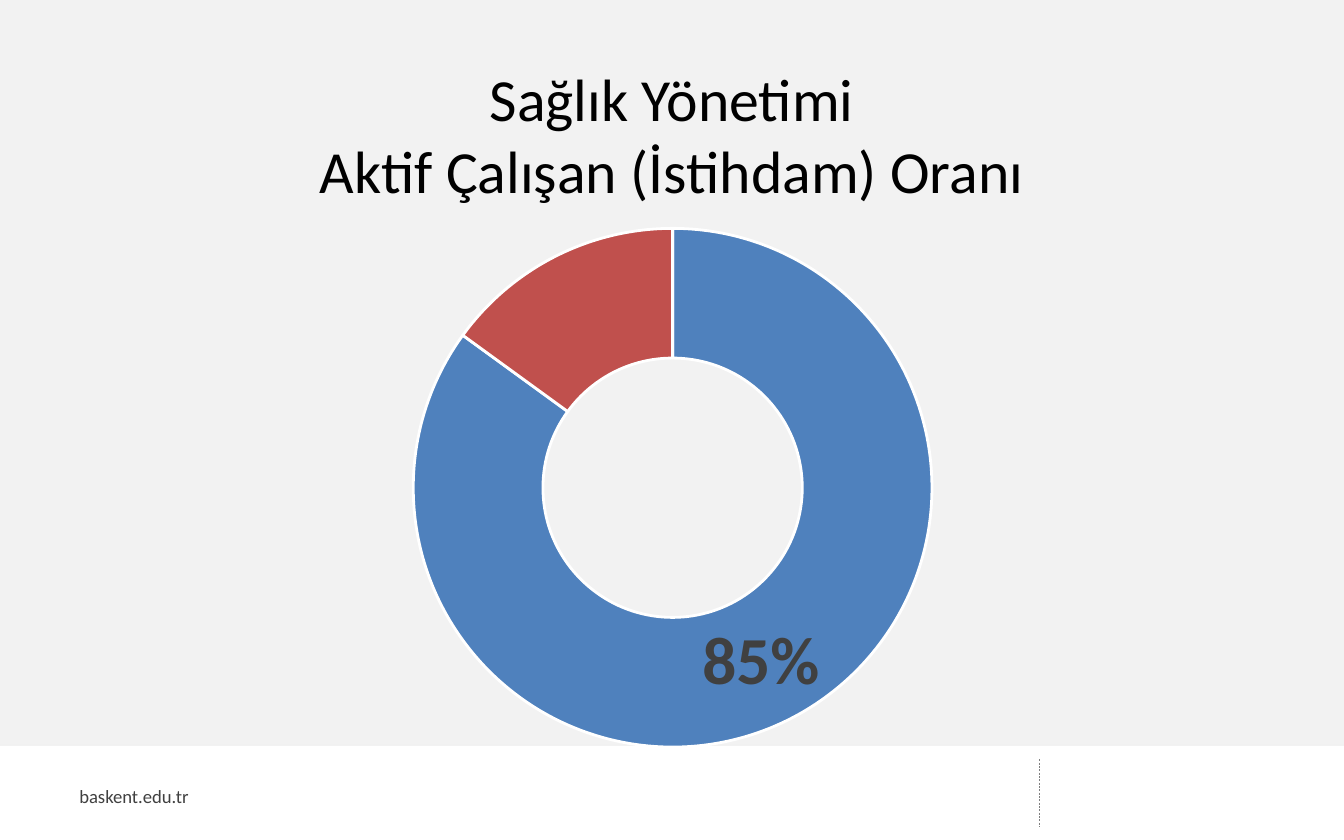
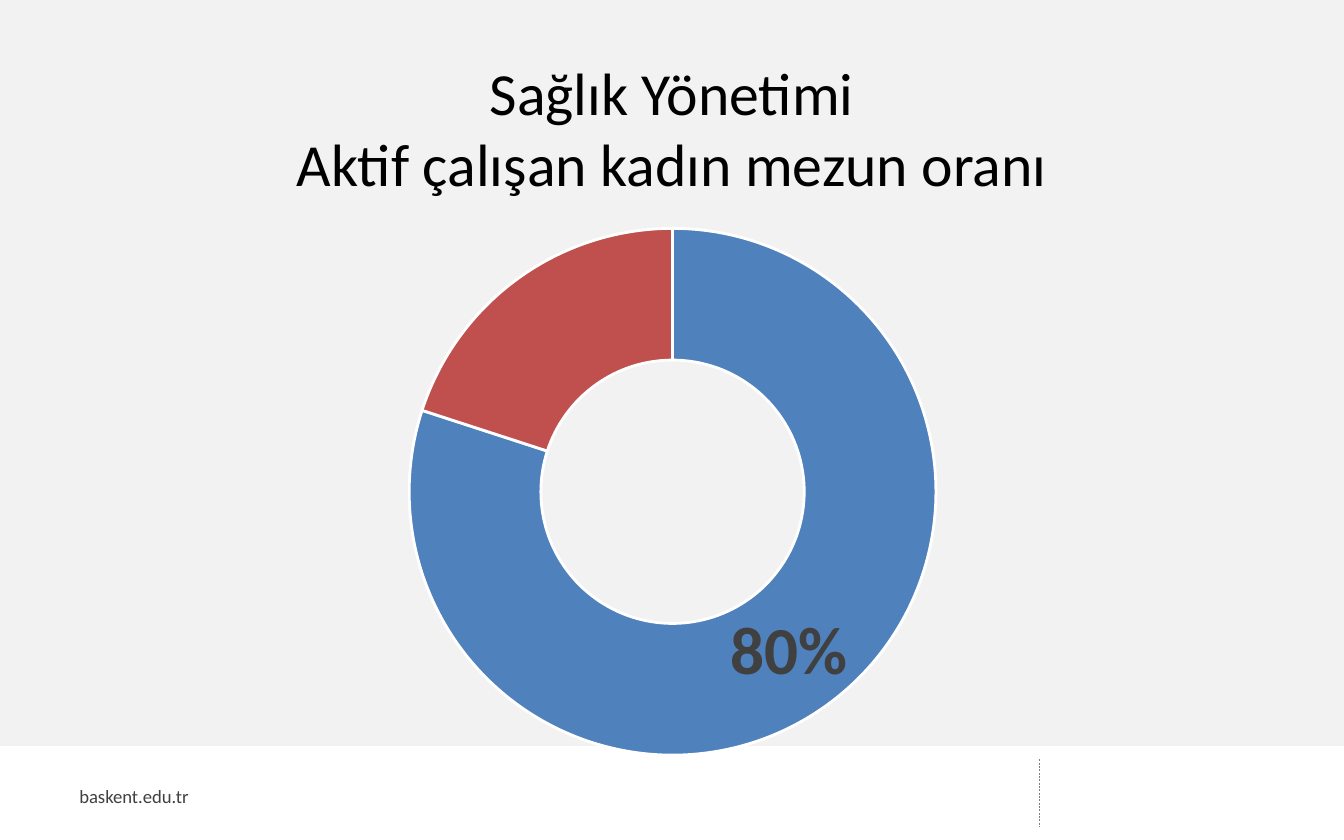
from lxml import etree
from pptx import Presentation
from pptx.chart.data import CategoryChartData
from pptx.dml.color import RGBColor
from pptx.enum.chart import XL_CHART_TYPE
from pptx.enum.dml import MSO_LINE
from pptx.enum.shapes import MSO_CONNECTOR, MSO_SHAPE
from pptx.enum.text import MSO_ANCHOR, MSO_AUTO_SIZE, PP_ALIGN
from pptx.oxml import parse_xml
from pptx.oxml.ns import nsdecls, qn
from pptx.util import Inches, Pt

# Content: title (\v breaks a line), its box and anchor, share shown, ring diameter
SLIDES = [
    {"title": "Sağlık Yönetimi\nAktif Çalışan (İstihdam) Oranı",
     "box": (0.9, 0.41, 8.2, 1.72), "anchor": MSO_ANCHOR.TOP,
     "share": 0.85, "ring": 3.86},
    {"title": "Sağlık Yönetimi\vAktif çalışan kadın mezun oranı",
     "box": (1.25, 0.81, 7.5, 0.72), "anchor": MSO_ANCHOR.BOTTOM,
     "share": 0.80, "ring": 3.92},
]
FOOTER = "baskent.edu.tr"

# Shared style
FONT = "Calibri"
PAPER, WHITE, BLACK = "F2F2F2", "FFFFFF", "000000"
DARK, GREY = "404040", "808080"
RING_COLORS = ["4F81BD", "C0504D"]
WIDTH, HEIGHT, BAND_TOP = 10, 6.25, 5.55
CHART_BOX = (1.67, 1.56, 6.67, 4.44)
RING_TOP = 0.14  # from the top of the chart


def rgb(color):
    return RGBColor.from_string(color)


def box(*lengths):
    return [Inches(n) for n in lengths]


def set_font(font, size, color, bold=False):
    font.name, font.size, font.bold = FONT, Pt(size), bold
    font.color.rgb = rgb(color)


def add_footer(slide):
    # White band with a soft shadow
    band = slide.shapes.add_shape(
        MSO_SHAPE.RECTANGLE, *box(0, BAND_TOP, WIDTH, HEIGHT - BAND_TOP))
    band.fill.solid()
    band.fill.fore_color.rgb = rgb(WHITE)
    band.line.fill.background()
    band._element.spPr.append(parse_xml(
        f'<a:effectLst {nsdecls("a")}><a:outerShdw blurRad="{Pt(3.1)}" '
        f'dist="{Pt(1.8)}" dir="5400000" rotWithShape="0">'
        f'<a:srgbClr val="{BLACK}"><a:alpha val="35000"/></a:srgbClr>'
        '</a:outerShdw></a:effectLst>'))

    # Dashed divider
    line = slide.shapes.add_connector(
        MSO_CONNECTOR.STRAIGHT, *box(7.73, 5.65, 7.73, 6.15))
    line.line.color.rgb = rgb(GREY)
    line.line.width = Pt(0.25)
    line.line.dash_style = MSO_LINE.DASH
    etree.SubElement(line._element.spPr, qn("a:effectLst"))

    # Web address
    tf = slide.shapes.add_textbox(*box(0.59, 5.79, 1.98, 0.27)).text_frame
    tf.word_wrap = True
    tf.vertical_anchor = MSO_ANCHOR.MIDDLE
    tf.margin_left = tf.margin_top = tf.margin_right = tf.margin_bottom = 0
    tf.text = FOOTER
    set_font(tf.paragraphs[0].font, 10, DARK)


def add_ring(slide, share, diameter):
    data = CategoryChartData(number_format="0%")
    data.categories = ["1", "2"]
    data.add_series("Series 1", [share, round(1 - share, 2)])
    chart = slide.shapes.add_chart(
        XL_CHART_TYPE.DOUGHNUT, *box(*CHART_BOX), data).chart
    chart.has_legend = chart.has_title = False
    set_font(chart.font, 10, BLACK)
    plot = chart.plots[0]
    plot.vary_by_categories = True
    plot._element.find(qn("c:holeSize")).set("val", "75")

    series = plot.series[0]
    for i, color in enumerate(RING_COLORS):
        fmt = series.points[i].format
        fmt.fill.solid()
        fmt.fill.fore_color.rgb = rgb(color)
        fmt.line.color.rgb = rgb(WHITE)
        fmt.line.width = Pt(1.5)

    # Only the first part carries its value
    labels = series.data_labels
    labels.show_value = True
    labels.show_percentage = labels.show_category_name = False
    labels.number_format, labels.number_format_is_linked = "0%", False
    set_font(labels.font, 36, DARK, bold=True)
    labels._element.insert(0, parse_xml(
        f'<c:dLbl {nsdecls("c")}><c:idx val="1"/><c:delete val="1"/></c:dLbl>'))

    # Ring centred across the chart, at a fixed distance from its top
    w, h = CHART_BOX[2:]
    layout = {"x": (1 - diameter / w) / 2, "y": RING_TOP / h,
              "w": diameter / w, "h": diameter / h}
    parts = "".join(f'<c:{k} val="{v:.4f}"/>' for k, v in layout.items())
    area = plot._element.getparent()
    for old in area.findall(qn("c:layout")):
        area.remove(old)
    area.insert(0, parse_xml(
        f'<c:layout {nsdecls("c")}><c:manualLayout>'
        '<c:layoutTarget val="inner"/><c:xMode val="edge"/><c:yMode val="edge"/>'
        f'{parts}</c:manualLayout></c:layout>'))


def set_title(slide, text, place, anchor):
    sp = slide.shapes.title
    sp.left, sp.top, sp.width, sp.height = box(*place)
    tf = sp.text_frame
    tf.text = text
    tf.word_wrap = True
    tf.auto_size = MSO_AUTO_SIZE.NONE
    tf.vertical_anchor = anchor
    for p in tf.paragraphs:
        p.alignment = PP_ALIGN.CENTER
        set_font(p.font, 32, BLACK)


def main():
    prs = Presentation()
    prs.slide_width, prs.slide_height = box(WIDTH, HEIGHT)
    for item in SLIDES:
        slide = prs.slides.add_slide(prs.slide_layouts[5])
        slide.background.fill.solid()
        slide.background.fill.fore_color.rgb = rgb(PAPER)
        add_footer(slide)
        add_ring(slide, item["share"], item["ring"])
        set_title(slide, item["title"], item["box"], item["anchor"])
    prs.save("out.pptx")


if __name__ == "__main__":
    main()
